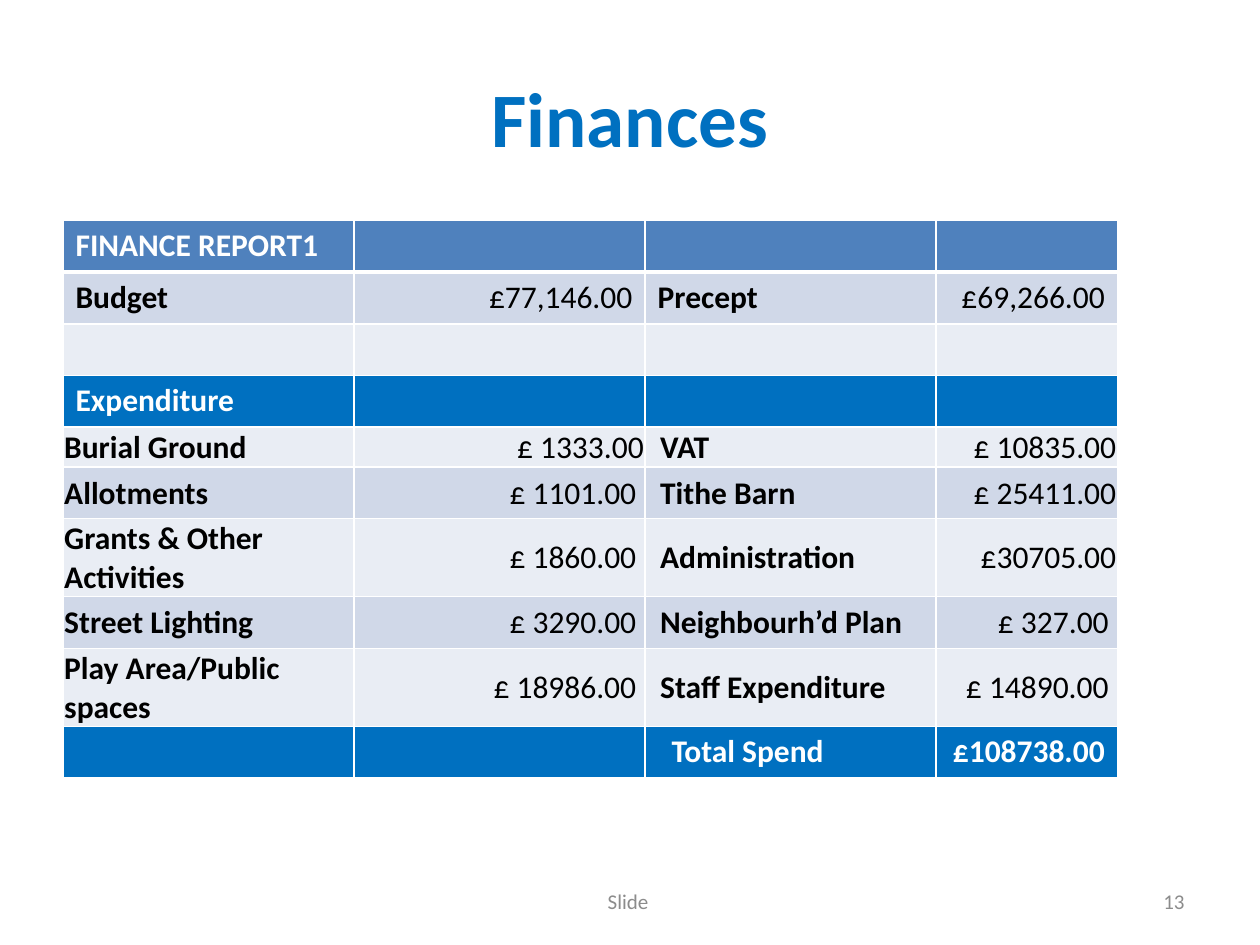
from lxml import etree
from pptx import Presentation
from pptx import util as u
from pptx.dml.color import RGBColor
from pptx.enum import text
from pptx.oxml import ns

BLUE = RGBColor(0x00, 0x70, 0xC0)
HEADER = RGBColor(0x4F, 0x81, 0xBD)
BAND = RGBColor(0xD0, 0xD8, 0xE8)
PALE = RGBColor(0xE9, 0xED, 0xF4)
WHITE = RGBColor(0xFF, 0xFF, 0xFF)
BLACK = RGBColor(0x00, 0x00, 0x00)
GREY = RGBColor(0x8C, 0x8C, 0x8C)

LEFT, CENTER, RIGHT = text.PP_ALIGN.LEFT, text.PP_ALIGN.CENTER, text.PP_ALIGN.RIGHT
COLUMNS = [2.31, 2.31, 2.31, 1.44]
ROWS = [
    ("FINANCE REPORT1", "", "", ""),
    ("Budget", "£77,146.00", "Precept", "£69,266.00"),
    ("", "", "", ""),
    ("Expenditure", "", "", ""),
    ("Burial Ground", "£ 1333.00", "VAT", "£ 10835.00"),
    ("Allotments", "£ 1101.00", "Tithe Barn", "£ 25411.00"),
    ("Grants & Other Activities", "£ 1860.00", "Administration", "£30705.00"),
    ("Street Lighting", "£ 3290.00", "Neighbourh’d Plan", "£ 327.00"),
    ("Play Area/Public spaces", "£ 18986.00", "Staff Expenditure", "£ 14890.00"),
    ("", "", "Total Spend", "£108738.00"),
]
ROW_FILLS = {0: HEADER, 3: BLUE, 9: BLUE}
EXPENSES = range(4, 9)
SPACED_AMOUNTS = {(5, 1), (6, 1), (7, 1), (8, 1), (7, 3), (8, 3)}


class PageBuilder:
    """Holds the style and the current slide."""

    font = "Calibri"

    def __init__(self, page):
        self.page = page

    def words(self, frame, wording, size, color, bold=False, align=LEFT):
        frame.text = wording
        para = frame.paragraphs[0]
        para.alignment = align
        for span in para.runs:
            span.font.name = self.font
            span.font.size = u.Pt(size)
            span.font.bold = bold
            span.font.color.rgb = color

    def title(self, wording):
        box = self.page.shapes.title
        box.left, box.top = u.Inches(0.5), u.Inches(0.3)
        box.width, box.height = u.Inches(9), u.Inches(1.25)
        box.text_frame.vertical_anchor = text.MSO_ANCHOR.MIDDLE
        self.words(box.text_frame, wording, 44, BLUE, True, CENTER)

    def footer(self, wording, left, width, align):
        box = self.page.shapes.add_textbox(
            u.Inches(left), u.Inches(6.95), u.Inches(width), u.Inches(0.4))
        box.text_frame.word_wrap = True
        box.text_frame.vertical_anchor = text.MSO_ANCHOR.MIDDLE
        self.words(box.text_frame, wording, 12, GREY, align=align)

    def borders(self, cell, top, bottom):
        properties = cell._tc.get_or_add_tcPr()
        for side, width in (("L", 1), ("R", 1), ("T", top), ("B", bottom)):
            line = etree.SubElement(properties, ns.qn(f"a:ln{side}"), w=str(u.Pt(width)))
            fill = etree.SubElement(line, ns.qn("a:solidFill"))
            etree.SubElement(fill, ns.qn("a:srgbClr"), val=str(WHITE))

    def cell(self, cell, row, column, wording):
        self.borders(cell, 3 if row == 1 else 1, 3 if row == 0 else 1)
        cell.fill.solid()
        cell.fill.fore_color.rgb = ROW_FILLS.get(row, BAND if row % 2 else PALE)
        if row in EXPENSES:
            cell.vertical_anchor = text.MSO_ANCHOR.MIDDLE
            cell.margin_left = u.Inches(0.12 if column == 2 else 0.01)
            cell.margin_right = u.Inches(0.07 if (row, column) in SPACED_AMOUNTS else 0.01)
            cell.margin_top, cell.margin_bottom = u.Inches(0.01), 0
        elif wording == "Total Spend":
            cell.margin_left = u.Inches(0.21)
        amount = column % 2 == 1
        if wording:
            self.words(cell.text_frame, wording, 18,
                       WHITE if row in ROW_FILLS else BLACK,
                       not amount or row in ROW_FILLS, RIGHT if amount else LEFT)

    def table(self, rows, widths, left, top):
        heights = [0.14 if row == 4 else 0.41 for row in range(len(rows))]
        grid = self.page.shapes.add_table(
            len(rows), len(widths), u.Inches(left), u.Inches(top),
            u.Inches(sum(widths)), u.Inches(sum(heights))).table
        for column, width in zip(grid.columns, widths):
            column.width = u.Inches(width)
        for row, (entries, height) in enumerate(zip(rows, heights)):
            grid.rows[row].height = u.Inches(height)
            for column, entry in enumerate(entries):
                self.cell(grid.cell(row, column), row, column, entry)


def main():
    deck = Presentation()
    deck.slide_width, deck.slide_height = u.Inches(10), u.Inches(7.5)
    builder = PageBuilder(deck.slides.add_slide(deck.slide_layouts[5]))
    builder.title("Finances")
    builder.table(ROWS, COLUMNS, 0.5, 1.75)
    builder.footer("Slide", 3.4, 3.17, CENTER)
    builder.footer("13", 7.17, 2.33, RIGHT)
    deck.save("out.pptx")


if __name__ == "__main__":
    main()
